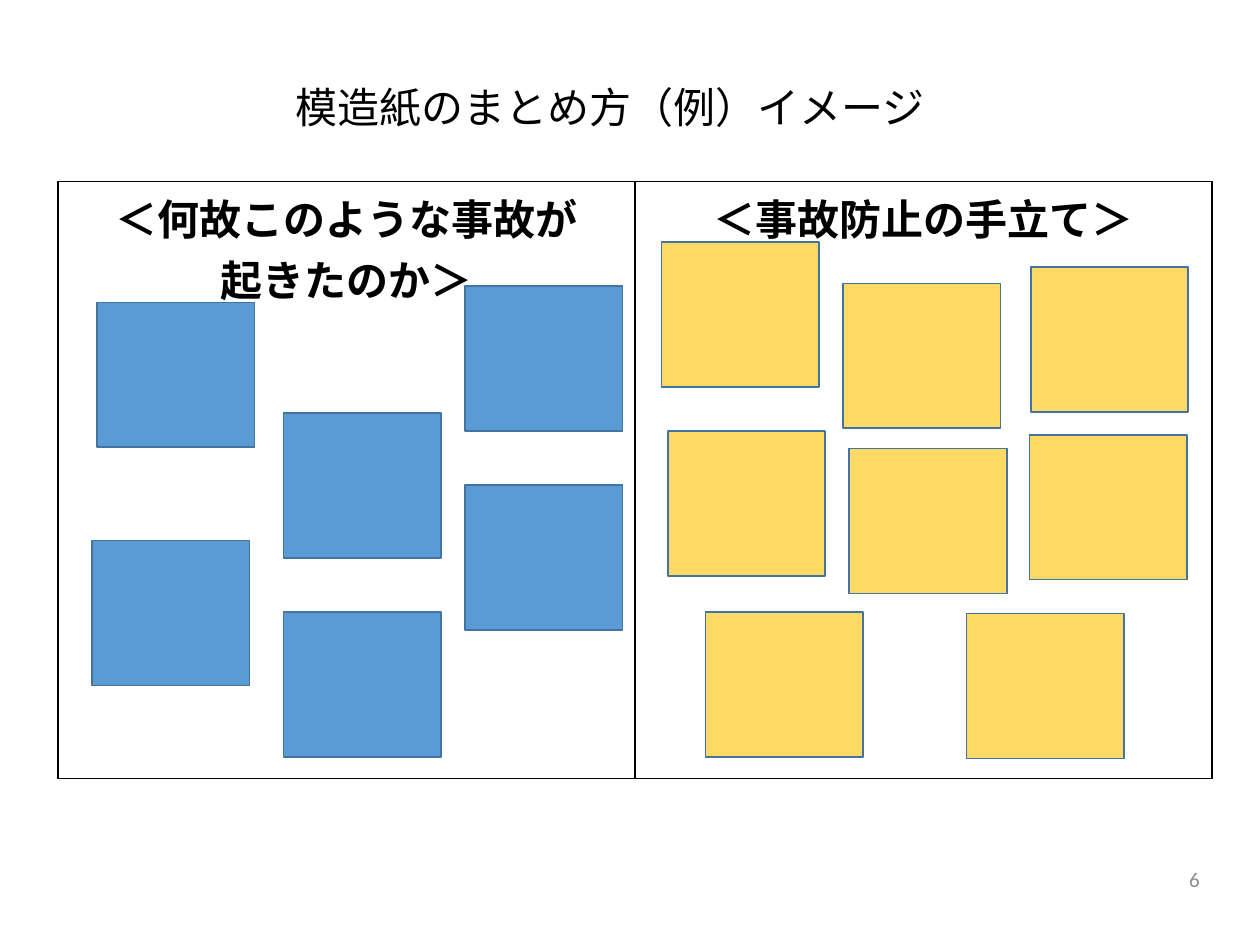
"""Build the slide showing how to arrange notes on a large sheet of paper."""
from dataclasses import dataclass

from lxml.etree import SubElement
from pptx import Presentation
from pptx.dml.color import RGBColor
from pptx.enum.shapes import MSO_SHAPE as Shape
from pptx.enum.text import MSO_ANCHOR as Anchor, MSO_AUTO_SIZE as AutoSize, PP_ALIGN as Align
from pptx.oxml.ns import qn
from pptx.slide import Slide
from pptx.table import _Cell as Cell
from pptx.text.text import _Paragraph as Paragraph
from pptx.util import Inches, Pt

COLORS = {
    "text": "000000",
    "number": "8C8C8C",
    "cause": "5B9BD5",
    "measure": "FFD966",
    "outline": "43739E",
}
JAPANESE = "Noto Sans CJK JP"
LATIN = "Calibri"
NOTE_WIDTH, NOTE_HEIGHT = 1.25, 1.15
COLUMN_WIDTH, SHEET_HEIGHT = 4.58, 4.74


@dataclass(frozen=True)
class Section:
    heading: tuple[str, ...]
    color: str
    notes: tuple[tuple[float, float], ...]


@dataclass(frozen=True)
class Label:
    text: str
    box: tuple[float, float, float, float]
    size: int
    font: str
    color: str
    align: Align
    anchor: Anchor
    fit: AutoSize


SECTIONS = (
    Section(
        ("＜何故このような事故が", "起きたのか＞"),
        "cause",
        ((0.77, 2.4), (3.69, 2.27), (2.25, 3.28), (0.73, 4.29), (3.69, 3.85), (2.25, 4.86)),
    ),
    Section(
        ("＜事故防止の手立て＞",),
        "measure",
        ((5.25, 1.92), (6.69, 2.25), (8.18, 2.12), (5.3, 3.42),
         (6.74, 3.56), (8.17, 3.45), (5.6, 4.86), (7.67, 4.87)),
    ),
)
LABELS = (
    Label("模造紙のまとめ方（例）イメージ", (0.46, 0.6, 8.76, 0.5), 24, JAPANESE,
          "text", Align.CENTER, Anchor.TOP, AutoSize.SHAPE_TO_FIT_TEXT),
    Label("6", (7.54, 6.73, 2.08, 0.5), 12, LATIN,
          "number", Align.RIGHT, Anchor.MIDDLE, AutoSize.NONE),
)


def rgb(name: str) -> RGBColor:
    """Return a named colour."""
    return RGBColor.from_string(COLORS[name])


def add_run(paragraph: Paragraph, text: str, size: int, font: str, color: str,
            bold: bool = False) -> None:
    """Add one formatted run with a Japanese fallback font."""
    run = paragraph.add_run()
    run.text = text
    run.font.size = Pt(size)
    run.font.name = font
    run.font.bold = bold
    run.font.color.rgb = rgb(color)
    SubElement(run.font._element, qn("a:ea"), typeface=JAPANESE)


def add_label(slide: Slide, label: Label) -> None:
    """Add a line of free text."""
    box = slide.shapes.add_textbox(*map(Inches, label.box))
    frame = box.text_frame
    frame.word_wrap = True
    frame.auto_size = label.fit
    frame.vertical_anchor = label.anchor
    paragraph = frame.paragraphs[0]
    paragraph.alignment = label.align
    add_run(paragraph, label.text, label.size, label.font, label.color)


def add_borders(cell: Cell) -> None:
    """Draw a thin line on every side of a cell."""
    properties = cell._tc.get_or_add_tcPr()
    for side in ("a:lnL", "a:lnR", "a:lnT", "a:lnB"):
        line = SubElement(properties, qn(side), w=str(Pt(1)))
        fill = SubElement(line, qn("a:solidFill"))
        SubElement(fill, qn("a:srgbClr"), val=COLORS["text"])


def add_sheet(slide: Slide, sections: tuple[Section, ...]) -> None:
    """Add the sheet as a table with one column per section."""
    count = len(sections)
    table = slide.shapes.add_table(
        1, count, Inches(0.46), Inches(1.44),
        Inches(COLUMN_WIDTH * count), Inches(SHEET_HEIGHT),
    ).table
    table.first_row = table.horz_banding = False
    for column, section in enumerate(sections):
        cell = table.cell(0, column)
        cell.margin_left = cell.margin_right = Inches(0.07)
        cell.margin_top = cell.margin_bottom = Inches(0.04)
        add_borders(cell)
        cell.fill.background()
        frame = cell.text_frame
        for row, text in enumerate(section.heading):
            paragraph = frame.add_paragraph() if row else frame.paragraphs[0]
            paragraph.alignment = Align.CENTER
            add_run(paragraph, text, 24, LATIN, "text", bold=True)


def add_note(slide: Slide, left: float, top: float, color: str) -> None:
    """Add one sticky note."""
    note = slide.shapes.add_shape(
        Shape.RECTANGLE, Inches(left), Inches(top), Inches(NOTE_WIDTH), Inches(NOTE_HEIGHT)
    )
    note.shadow.inherit = False
    note.fill.solid()
    note.fill.fore_color.rgb = rgb(color)
    note.line.color.rgb = rgb("outline")
    note.line.width = Pt(1)


def main() -> None:
    """Build and save the slide."""
    deck = Presentation()
    deck.slide_width, deck.slide_height = Inches(10), Inches(7.5)
    slide = deck.slides.add_slide(deck.slide_layouts[6])
    add_sheet(slide, SECTIONS)
    for section in SECTIONS:
        for left, top in section.notes:
            add_note(slide, left, top, section.color)
    for label in LABELS:
        add_label(slide, label)
    deck.save("out.pptx")


if __name__ == "__main__":
    main()
